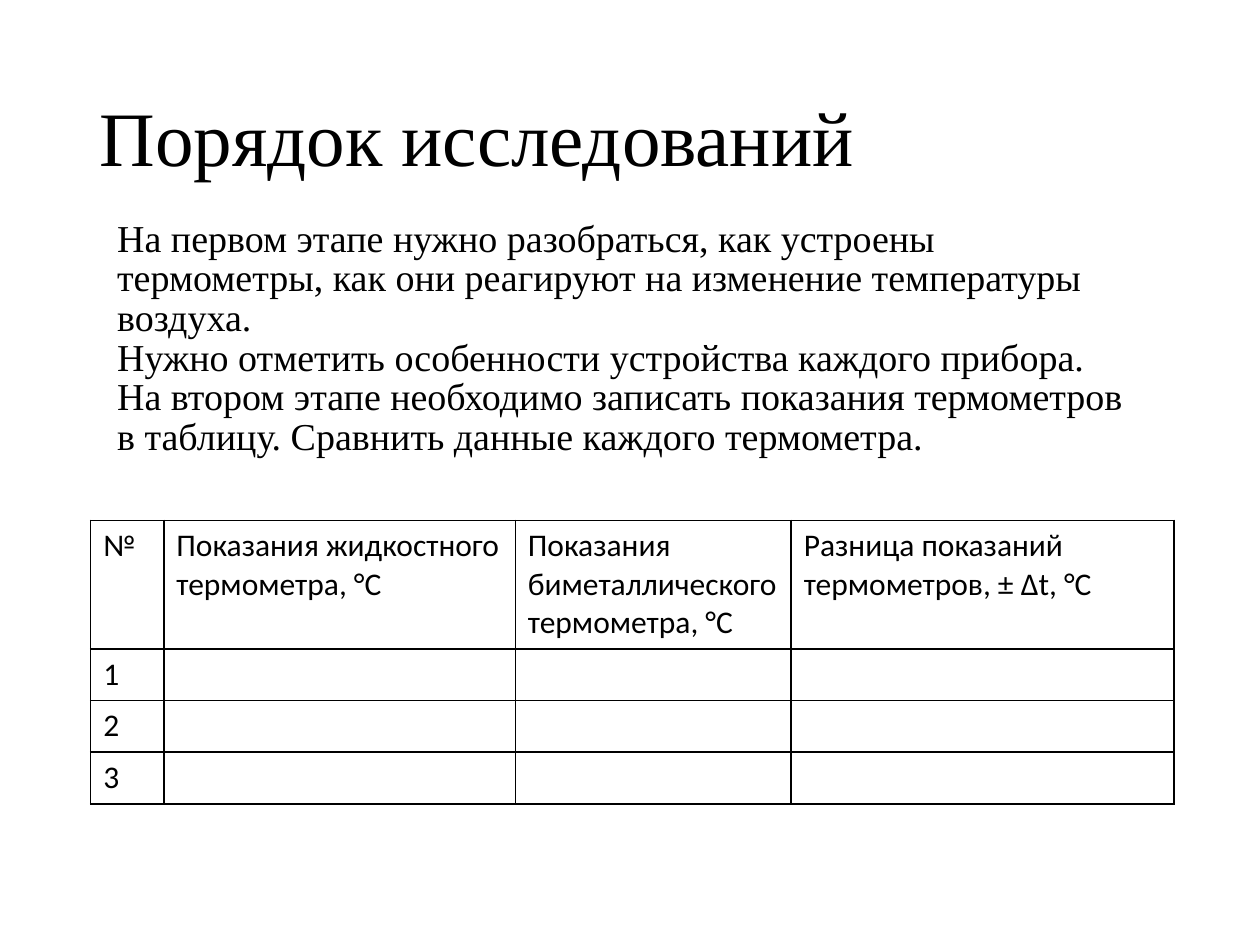
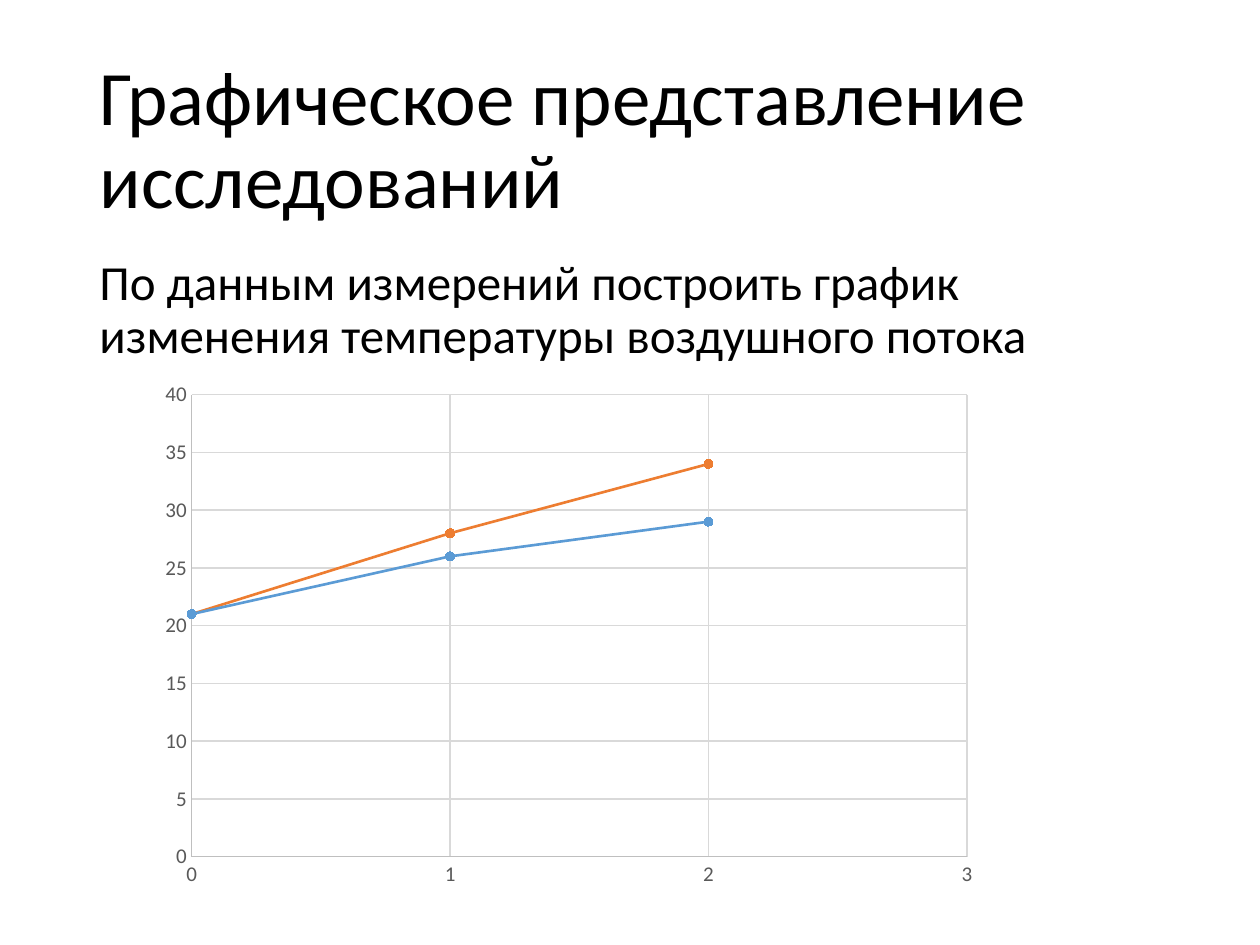
from lxml import etree
from pptx import Presentation, util as u
from pptx.chart.data import XyChartData
from pptx.dml.color import RGBColor
from pptx.enum import chart as ch, text as t
from pptx.oxml.ns import qn

PX = 9144  # EMU in one px, 100 px to the inch
BLACK = RGBColor(0x00, 0x00, 0x00)
GREY = RGBColor(0x59, 0x59, 0x59)
AXIS = RGBColor(0xBF, 0xBF, 0xBF)
GRID = RGBColor(0xD9, 0xD9, 0xD9)
BLUE = RGBColor(0x5B, 0x9B, 0xD5)
ORANGE = RGBColor(0xED, 0x7D, 0x31)
SANS, SERIF = "Calibri", "Times New Roman"


def px(*vals):
    return [u.Emu(v * PX) for v in vals]


def put(obj, vals):
    for name, val in vals.items():
        setattr(obj, name, val)


class Deck:
    def __init__(self):
        self.prs = Presentation()
        self.prs.slide_width, self.prs.slide_height = px(1000, 750)
        self.slide = None

    def font(self, font, size, name=SANS, color=BLACK):
        put(font, {"size": u.Pt(size), "name": name, "bold": False})
        font.color.rgb = color

    def line(self, line, color, width):
        line.color.rgb = color
        line.width = u.Pt(width)

    def label(self, frame, words, size, name=SANS, **para):
        put(frame, {"word_wrap": True, "auto_size": t.MSO_AUTO_SIZE.NONE})
        par = frame.paragraphs[0]
        par.text = words
        put(par, {"alignment": t.PP_ALIGN.LEFT, **para})
        for run in par.runs:
            self.font(run.font, size, name)

    def page(self, title, name=SANS):
        self.slide = self.prs.slides.add_slide(self.prs.slide_layouts[5])
        head = self.slide.shapes.title
        put(head, dict(zip(("left", "top", "width", "height"),
                           px(69, 40, 862, 145))))
        head.text_frame.vertical_anchor = t.MSO_ANCHOR.MIDDLE
        self.label(head.text_frame, title, 44, name, line_spacing=0.9)

    def body(self, box, words, size, name=SANS, inset=10, **para):
        frame = self.slide.shapes.add_textbox(*px(*box)).text_frame
        frame.margin_left = px(inset)[0]
        self.label(frame, words, size, name, space_before=u.Pt(10), **para)

    def border(self, cell):
        props = cell._tc.get_or_add_tcPr()
        for i, side in enumerate(("lnL", "lnR", "lnT", "lnB")):
            edge = etree.Element(qn("a:" + side), w=str(u.Pt(1)))
            fill = etree.SubElement(edge, qn("a:solidFill"))
            etree.SubElement(fill, qn("a:srgbClr"), val=str(BLACK))
            props.insert(i, edge)

    def table(self, left, top, cols, rows, data):
        grid = self.slide.shapes.add_table(
            len(rows), len(cols), *px(left, top, sum(cols), sum(rows))).table
        put(grid, {"first_row": False, "horz_banding": False})
        for col, wide in zip(grid.columns, px(*cols)):
            col.width = wide
        for row, high, words in zip(grid.rows, px(*rows), data):
            row.height = high
            for i, cell in enumerate(row.cells):
                cell.fill.background()
                self.border(cell)
                if i < len(words):
                    self.label(cell.text_frame, words[i], 18)

    def axis(self, axis, top, step):
        put(axis, {"minimum_scale": 0, "maximum_scale": top,
                   "major_unit": step, "has_major_gridlines": True,
                   "major_tick_mark": ch.XL_TICK_MARK.NONE,
                   "minor_tick_mark": ch.XL_TICK_MARK.NONE})
        self.line(axis.format.line, AXIS, 0.75)
        self.line(axis.major_gridlines.format.line, GRID, 0.75)
        self.font(axis.tick_labels.font, 12, color=GREY)

    def chart(self, box, curves):
        data = XyChartData()
        for name, _, vals in curves:
            series = data.add_series(name)
            for x, y in enumerate(vals):
                series.add_data_point(x, y)
        plot = self.slide.shapes.add_chart(
            ch.XL_CHART_TYPE.XY_SCATTER_SMOOTH, *px(*box), data).chart
        put(plot, {"has_legend": False, "has_title": False})
        self.font(plot.font, 10)
        plot.plots[0].vary_by_categories = False
        self.axis(plot.category_axis, 3, 1)
        self.axis(plot.value_axis, 40, 5)
        for series, (_, color, _) in zip(plot.plots[0].series, curves):
            series.smooth = True
            self.line(series.format.line, color, 1.5)
            mark = series.marker
            put(mark, {"style": ch.XL_MARKER_STYLE.CIRCLE, "size": 5})
            mark.format.fill.solid()
            mark.format.fill.fore_color.rgb = color
            self.line(mark.format.line, color, 0.75)


def main():
    deck = Deck()

    # Research steps and the table of readings
    deck.page("Порядок исследований", SERIF)
    deck.body(
        (58, 170, 862, 223),
        "На первом этапе нужно разобраться, как устроены термометры, "
        "как они реагируют на изменение температуры воздуха.\n"
        "Нужно отметить особенности устройства каждого прибора.\n"
        "На втором этапе необходимо записать показания термометров "
        "в таблицу. Сравнить данные каждого термометра.",
        21.7, SERIF, inset=35, line_spacing=0.87, space_after=u.Pt(8))
    heads = ["№", "Показания жидкостного термометра, °С",
             "Показания биметаллического термометра, °С",
             "Разница показаний термометров, ± Δt, °C"]
    deck.table(72, 413, (58, 279, 219, 304), (102, 41, 41, 41),
               [heads, ["1"], ["2"], ["3"]])

    # Graph of the air flow temperature
    deck.page("Графическое представление исследований")
    deck.body((69, 200, 862, 104),
              "По данным измерений построить график изменения "
              "температуры воздушного потока", 28, line_spacing=0.9)
    deck.chart((118, 295, 667, 417),
               [("Series 1", BLUE, (21, 26, 29)),
                ("Series 2", ORANGE, (21, 28, 34))])

    deck.prs.save("out.pptx")


if __name__ == "__main__":
    main()
